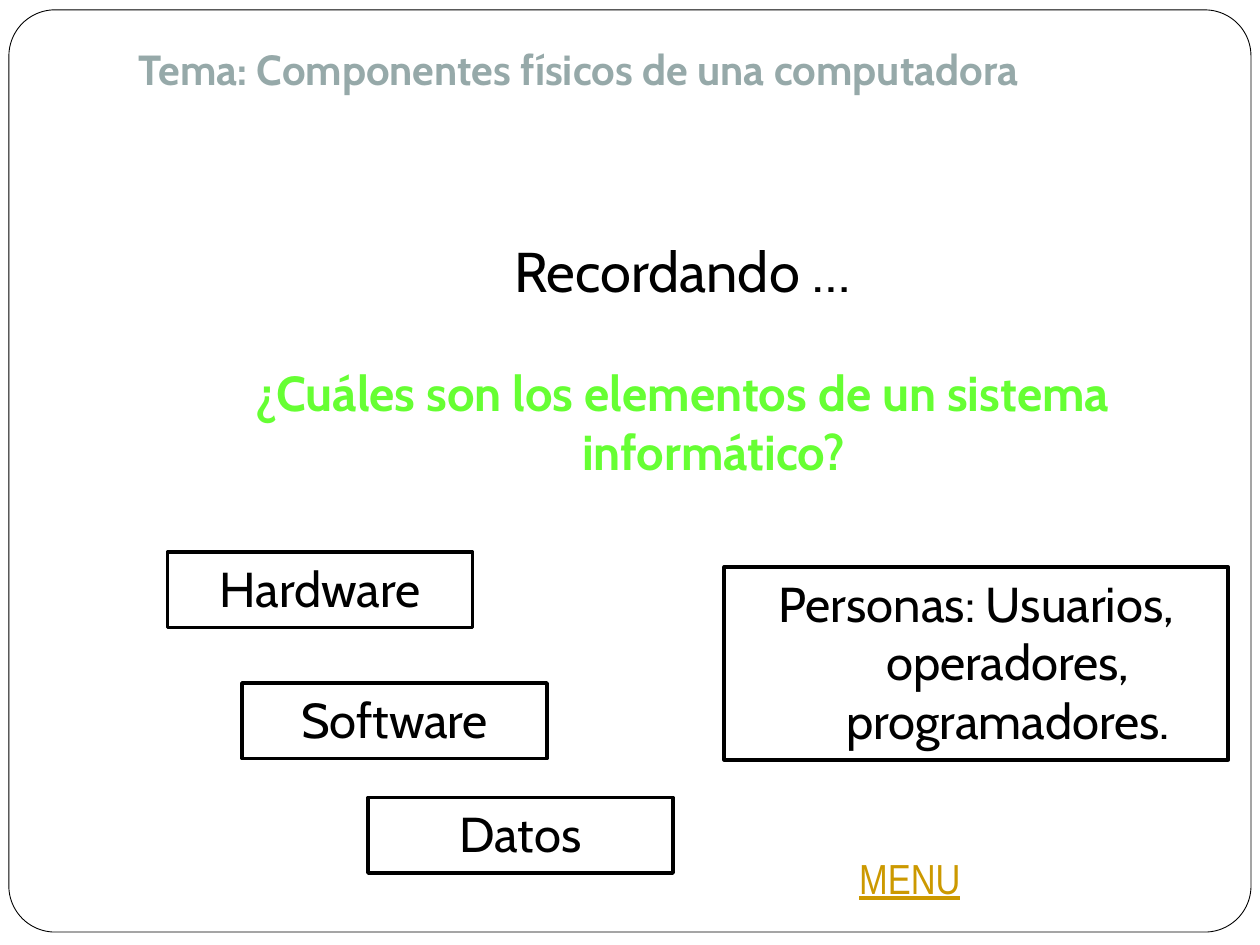
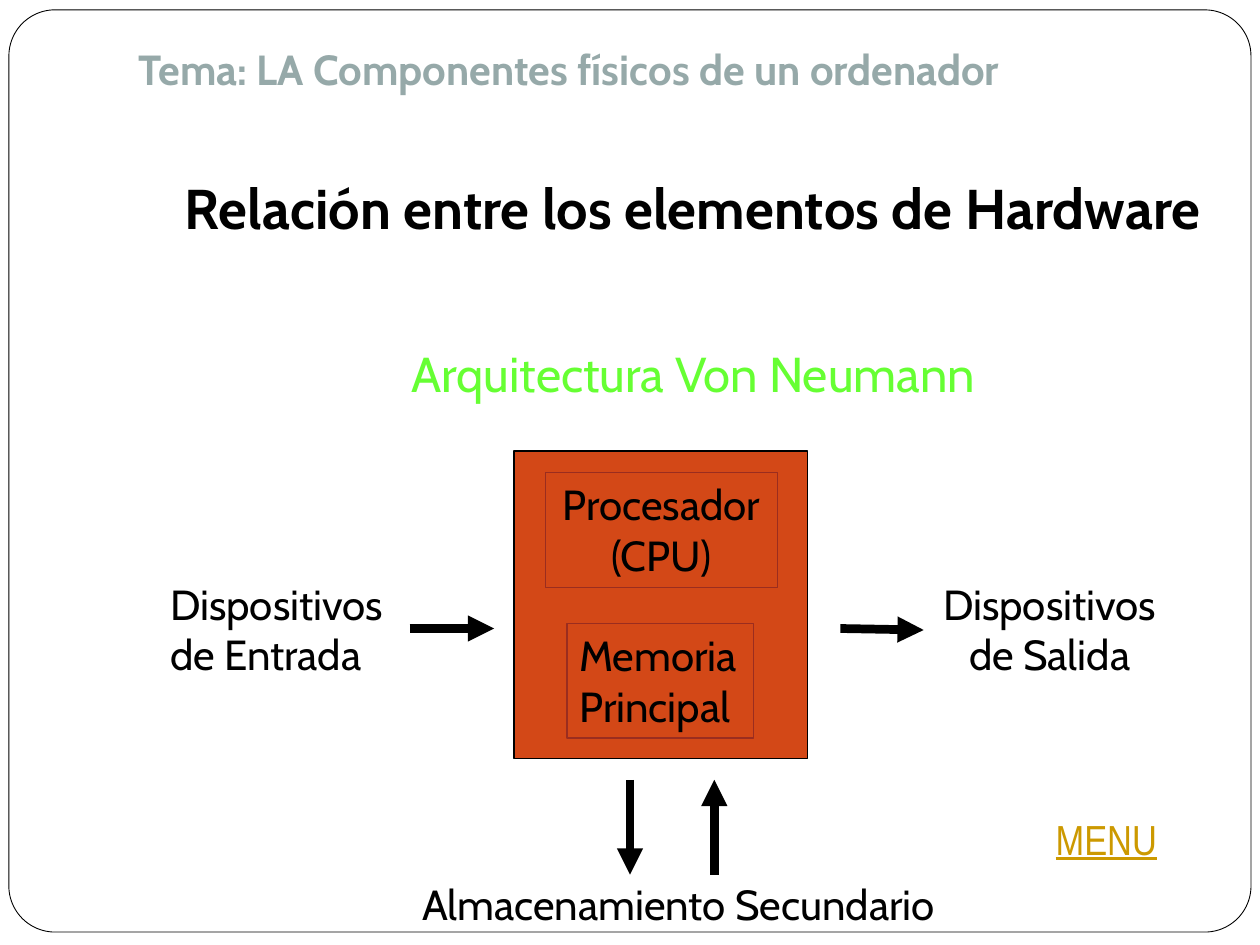
import pptx
import pptx.util
import pptx.dml.color
import pptx.enum.shapes
import pptx.enum.text
import pptx.oxml.ns
import lxml.etree

Cm = pptx.util.Cm
Pt = pptx.util.Pt
ALIGN = pptx.enum.text.PP_ALIGN
SHAPE = pptx.enum.shapes.MSO_SHAPE
qn = pptx.oxml.ns.qn

COLORS = {"paper": "FFFFFF", "ink": "000000", "tema": "96A9A9", "accent": "66FF33",
          "menu": "CC9900", "block": "D34817", "block_edge": "9B2D1F"}

STYLES = {
    "tema": {"size": 24, "bold": True, "color": "tema"},
    "lead": {"size": 32, "align": ALIGN.CENTER},
    "heading": {"size": 32, "bold": True, "align": ALIGN.CENTER},
    "question": {"size": 28, "bold": True, "color": "accent", "align": ALIGN.CENTER, "hanging": True},
    "subheading": {"size": 28, "color": "accent", "align": ALIGN.CENTER},
    "element": {"size": 28, "align": ALIGN.CENTER, "hanging": True, "edge": ("ink", 2)},
    "device": {"size": 24, "wrap": False},
    "device_centered": {"size": 24, "align": ALIGN.CENTER},
    "unit": {"size": 24, "wrap": False, "edge": ("block_edge", 0.75)},
    "unit_centered": {"size": 24, "wrap": False, "align": ALIGN.CENTER, "edge": ("block_edge", 0.75)},
    "menu": {"size": 24, "name": "Arial Narrow", "color": "menu", "underline": True},
}

FRAME = (0.18, 0.2, 25.04, 18.59)
TEMA = (2.54, 0.74, 21.39, 1.27)
ELEMENT = (6.15, 1.52)

SLIDES = [
    {
        "tema": "Tema: Componentes físicos de una computadora",
        "texts": [
            ("¿Cuáles son los elementos de un sistema informático?", "question", (2.54, 7.19, 22.43, 2.62)),
            ("Recordando …", "lead", (2.54, 4.65, 22.43, 1.6)),
            ("Hardware", "element", (3.38, 11.13, *ELEMENT)),
            ("Software", "element", (4.88, 13.77, *ELEMENT)),
            ("Datos", "element", (7.42, 16.08, *ELEMENT)),
            ("Personas: Usuarios, operadores, programadores.", "element", (14.6, 11.43, 10.16, 3.89)),
            ("MENU", "menu", (17.07, 17.07, 5.36, 1.27)),
        ],
    },
    {
        "tema": "Tema: LA Componentes físicos de un ordenador",
        "block": (10.36, 9.09, 5.92, 6.2),
        "texts": [
            ("Relación entre los elementos de Hardware", "heading", (2.54, 3.38, 22.86, 2.97)),
            ("Dispositivos\nde Entrada", "device", (3.18, 11.53, 4.9, 2.29)),
            ("Dispositivos de Salida", "device_centered", (18.62, 11.53, 5.08, 2.29)),
            ("Almacenamiento Secundario", "device", (8.26, 17.58, 11.07, 1.27)),
            ("Procesador\n(CPU)", "unit_centered", (11, 9.53, 4.67, 2.31)),
            ("Memoria\nPrincipal", "unit", (11.43, 12.57, 3.76, 2.31)),
            ("Arquitectura Von Neumann", "subheading", (2.54, 6.81, 22.86, 1.45)),
            ("MENU", "menu", (21.03, 16.28, 2.77, 1.27)),
        ],
        "arrows": [(8.26, 12.67, 9.96, 12.67), (16.94, 12.67, 18.62, 12.7),
                   (14.4, 17.63, 14.4, 15.72), (12.7, 15.72, 12.7, 17.63)],
    },
]


def rgb(color):
    return pptx.dml.color.RGBColor.from_string(COLORS[color])


def lengths(values):
    return [Cm(value) for value in values]


def paint_line(line, color, width):
    line.color.rgb = rgb(color)
    line.width = Pt(width)


def add_panel(slide, kind, place, edge, fill=None):
    panel = slide.shapes.add_shape(kind, *lengths(place))
    panel.shadow.inherit = False
    paint_line(panel.line, *edge)
    if fill:
        panel.fill.solid()
        panel.fill.fore_color.rgb = rgb(fill)
    else:
        panel.fill.background()
    return panel


def write(holder, text, style):
    frame = holder.text_frame
    frame_format = {"text": text, "word_wrap": style.get("wrap", True),
                    "auto_size": pptx.enum.text.MSO_AUTO_SIZE.NONE,
                    "vertical_anchor": pptx.enum.text.MSO_ANCHOR.TOP}
    for key, value in frame_format.items():
        setattr(frame, key, value)
    font_format = {"name": style.get("name", "Cabin"), "size": Pt(style["size"]),
                   "bold": style.get("bold", False), "underline": style.get("underline", False)}
    for paragraph in frame.paragraphs:
        paragraph.alignment = style.get("align", ALIGN.LEFT)
        if style.get("hanging"):
            properties = paragraph._p.get_or_add_pPr()
            properties.set("marL", str(Cm(1.27)))
            properties.set("indent", str(Cm(-1.27)))
        for run in paragraph.runs:
            run.font.color.rgb = rgb(style.get("color", "ink"))
            for key, value in font_format.items():
                setattr(run.font, key, value)


def add_text(slide, text, style_name, place):
    style = STYLES[style_name]
    if "edge" in style:
        holder = add_panel(slide, SHAPE.RECTANGLE, place, style["edge"])
    else:
        holder = slide.shapes.add_textbox(*lengths(place))
    write(holder, text, style)


def add_arrow(slide, ends):
    arrow = slide.shapes.add_connector(pptx.enum.shapes.MSO_CONNECTOR.STRAIGHT, *lengths(ends))
    paint_line(arrow.line, "ink", 5)
    outline = arrow.line._get_or_add_ln()
    lxml.etree.SubElement(outline, qn("a:tailEnd"), type="triangle")
    lxml.etree.SubElement(arrow.element.spPr, qn("a:effectLst"))


def add_tema(slide, text):
    title = slide.shapes.title
    for key, value in zip(("left", "top", "width", "height"), lengths(TEMA)):
        setattr(title, key, value)
    write(title, text, STYLES["tema"])


def share_frame(slide):
    frame = add_panel(slide, SHAPE.ROUNDED_RECTANGLE, FRAME, ("ink", 0.5), "paper")
    frame.adjustments[0] = 0.05
    slide.slide_layout.placeholders[0].element.addprevious(frame.element)


def main():
    deck = pptx.Presentation()
    deck.slide_width, deck.slide_height = lengths((25.4, 19.05))
    for number, content in enumerate(SLIDES):
        slide = deck.slides.add_slide(deck.slide_layouts[5])
        if number == 0:
            share_frame(slide)
        add_tema(slide, content["tema"])
        if "block" in content:
            add_panel(slide, SHAPE.RECTANGLE, content["block"], ("ink", 0.75), "block")
        for text, style_name, place in content["texts"]:
            add_text(slide, text, style_name, place)
        for ends in content.get("arrows", []):
            add_arrow(slide, ends)
    deck.save("out.pptx")


if __name__ == "__main__":
    main()
